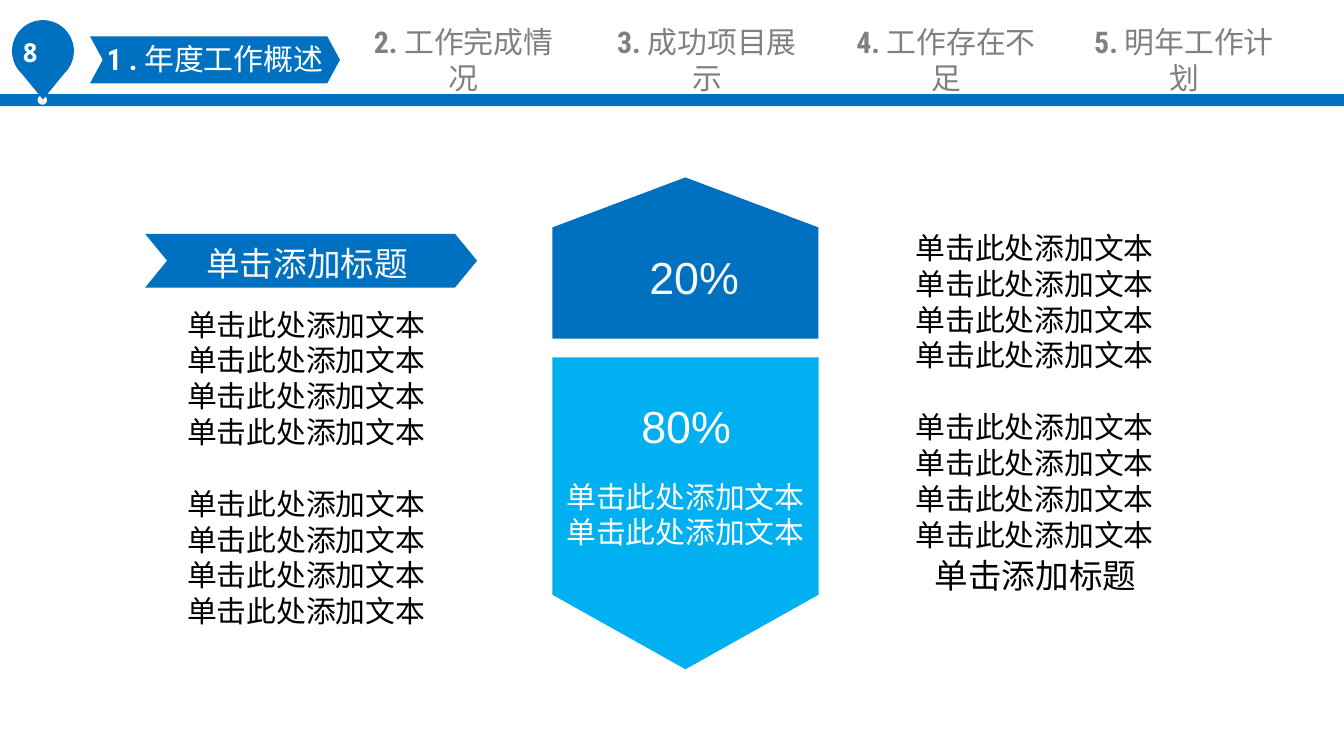
from math import cos, radians, sin

from lxml import etree
from pptx import Presentation
from pptx.dml.color import RGBColor
from pptx.enum import shapes, text
from pptx.oxml import ns
from pptx.util import Inches, Pt

BLUE, SKY, WHITE, PALE = "0070C0", "00B0F0", "FFFFFF", "F8F8F8"
GRAY, BLACK = "808080", "000000"
CJK = "Noto Sans CJK SC"
LINE = "单击此处添加文本"
HEADING = "单击添加标题"
LEADING = 1.2


def color(value):
    """Turn a hex string into a colour."""
    return RGBColor.from_string(value)


def paint(shape, fill):
    """Give a shape a plain fill without line or shadow."""
    shape.shadow.inherit = False
    shape.fill.solid()
    shape.fill.fore_color.rgb = color(fill)
    shape.line.fill.background()
    return shape


def add_shape(page, kind, box, fill, adjust=None):
    """Add a preset shape in the given box."""
    shape = page.shapes.add_shape(kind, *map(Inches, box))
    if adjust is not None:
        shape.adjustments[0] = adjust
    return paint(shape, fill)


def add_text(page, box, lines, size=16, fill=BLACK, font=CJK,
             insets=(0.1, 0.05, 0.1, 0.05), middle=False, gap_at=None):
    """Add centred lines, each a list of (words, bold) spans."""
    frame = page.shapes.add_textbox(*map(Inches, box)).text_frame
    frame.word_wrap = True
    (frame.margin_left, frame.margin_top,
     frame.margin_right, frame.margin_bottom) = map(Inches, insets)
    if middle:
        frame.vertical_anchor = text.MSO_ANCHOR.MIDDLE
    for index, spans in enumerate(lines):
        para = frame.paragraphs[0] if index == 0 else frame.add_paragraph()
        para.alignment = text.PP_ALIGN.CENTER
        para.line_spacing = Pt(size * LEADING)
        if index == gap_at:
            para.space_before = Pt(size * LEADING)
        for words, bold in spans:
            span = para.add_run()
            span.text = words
            span.font.name, span.font.size, span.font.bold = font, Pt(size), bold
            span.font.color.rgb = color(fill)
            east = etree.SubElement(span.font._element, ns.qn("a:ea"))
            east.set("typeface", CJK)


def plain(*lines):
    """Make regular-weight lines from strings."""
    return [[(words, False)] for words in lines]


def add_page_marker(page, box, number):
    """Draw the map pin with the page number and its dot."""
    left, top, width, height = box
    radius = width / 2
    middle, center = left + radius, top + radius
    add_shape(page, shapes.MSO_SHAPE.OVAL,
              (middle - 0.04, top + 0.56, 0.07, 0.07), "F6F6F6")
    points = [(Inches(middle + radius * cos(radians(angle))),
               Inches(center + radius * sin(radians(angle))))
              for angle in range(134, 407, 4)]
    builder = page.shapes.build_freeform(Inches(middle), Inches(top + height))
    builder.add_line_segments(points, close=True)
    paint(builder.convert_to_shape(), BLUE)
    add_text(page, (left - 0.13, top + 0.08, 0.65, 0.3), [[(number, True)]],
             size=14, fill=WHITE, font="Noto Sans Mono",
             insets=(0.07, 0.04, 0.19, 0.04))


def add_navigation(page, box):
    """Draw the section titles with the first one highlighted."""
    left, top, width, height = box
    add_shape(page, shapes.MSO_SHAPE.CHEVRON, (left, top, 1.86, height), BLUE, 0.27)
    sections = [
        ("1 . ", "年度工作概述", 0, 0, 1.86, 0.33, 0, WHITE),
        ("2. ", "工作完成情况", 2.01, 0.04, 1.54, 0.27, 0.03, GRAY),
        ("3. ", "成功项目展示", 3.82, 0.04, 1.54, 0.27, 0.03, GRAY),
        ("4. ", "工作存在不足", 5.6, 0.04, 1.54, 0.27, 0.03, GRAY),
        ("5. ", "明年工作计划", 7.37, 0.04, 1.54, 0.27, 0.03, GRAY),
    ]
    for number, title, across, down, wide, tall, side, fill in sections:
        add_text(page, (left + across, top + down, wide, tall),
                 [[(number, True), (title, False)]], fill=fill,
                 font="Roboto Condensed", insets=(side, 0, side, 0), middle=True)


def add_share_arrow(page, box, fill, rotation, adjust, share, offset, ink):
    """Draw a vertical pentagon with its percentage."""
    left, top, width, height = box
    shift = (width - height) / 2
    arrow = add_shape(page, shapes.MSO_SHAPE.PENTAGON,
                      (left + shift, top - shift, height, width), fill, adjust)
    arrow.rotation = rotation
    add_text(page, (left + offset[0], top + offset[1], 1.15, 0.5),
             plain(share), size=24, fill=ink, font="Arial")


def add_shares(page, box):
    """Draw the two share arrows, one above the other."""
    left, top, width, height = box
    add_share_arrow(page, (left, top, width, 1.2), BLUE, 270, 0.31,
                    "20%", (0.48, 0.49), PALE)
    lower = top + height - 2.32
    add_share_arrow(page, (left, lower, width, 2.32), SKY, 90, 0.28,
                    "80%", (0.42, 0.26), WHITE)
    add_text(page, (left, lower + 0.85, width, 0.64), plain(LINE, LINE),
             fill=WHITE, insets=(0.05, 0.05, 0.05, 0.05))


def add_body(page, box):
    """Write two groups of four lines."""
    add_text(page, box, plain(*[LINE] * 8), gap_at=4)


def add_left_column(page, box):
    """Draw the heading banner above its text."""
    left, top, width, height = box
    add_shape(page, shapes.MSO_SHAPE.CHEVRON,
              (left + 0.03, top, 2.47, 0.4), BLUE, 0.41)
    add_text(page, (left + 0.08, top + 0.02, 2.31, 0.4), plain(HEADING),
             size=18, fill=PALE)
    add_body(page, (left, top + 0.49, width, height - 0.49))


def add_right_column(page, box):
    """Write the text with its heading below."""
    left, top, width, height = box
    add_body(page, (left, top, width, 2.52))
    add_text(page, (left + 0.08, top + height - 0.4, 2.31, 0.4),
             plain(HEADING), size=18)


def main():
    """Build and save the deck."""
    deck = Presentation()
    deck.slide_width = Inches(10)
    deck.slide_height = deck.slide_width * 9 // 16
    page = deck.slides.add_slide(deck.slide_layouts[6])
    add_shape(page, shapes.MSO_SHAPE.RECTANGLE, (0, 0.7, 10, 0.09), BLUE)
    add_page_marker(page, (0.09, 0.15, 0.46, 0.59), "8")
    add_navigation(page, (0.67, 0.27, 8.91, 0.35))
    add_shares(page, (4.11, 1.32, 1.98, 3.66))
    add_left_column(page, (1.05, 1.74, 2.46, 3.01))
    add_right_column(page, (6.47, 1.66, 2.46, 2.82))
    deck.save("out.pptx")


if __name__ == "__main__":
    main()
